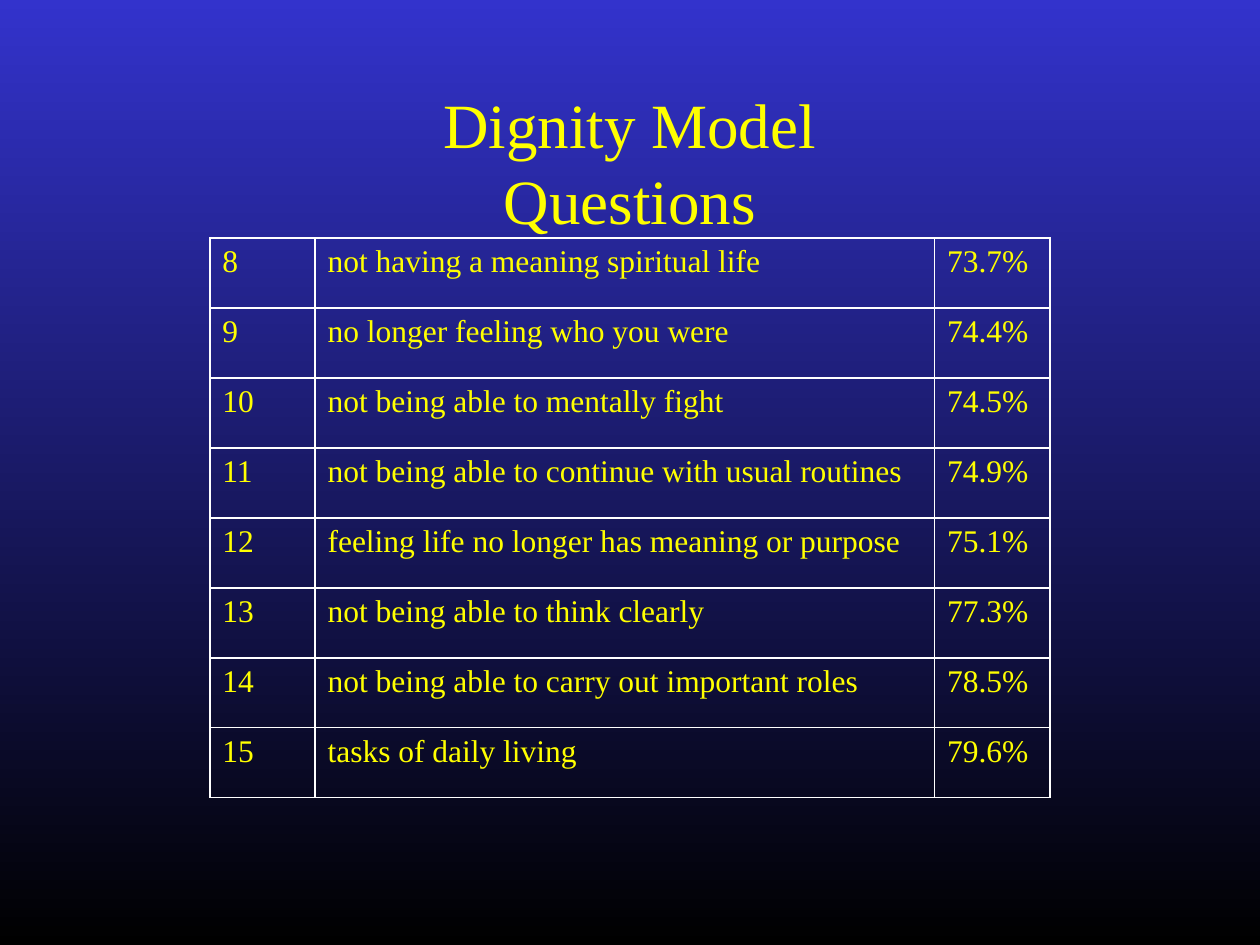
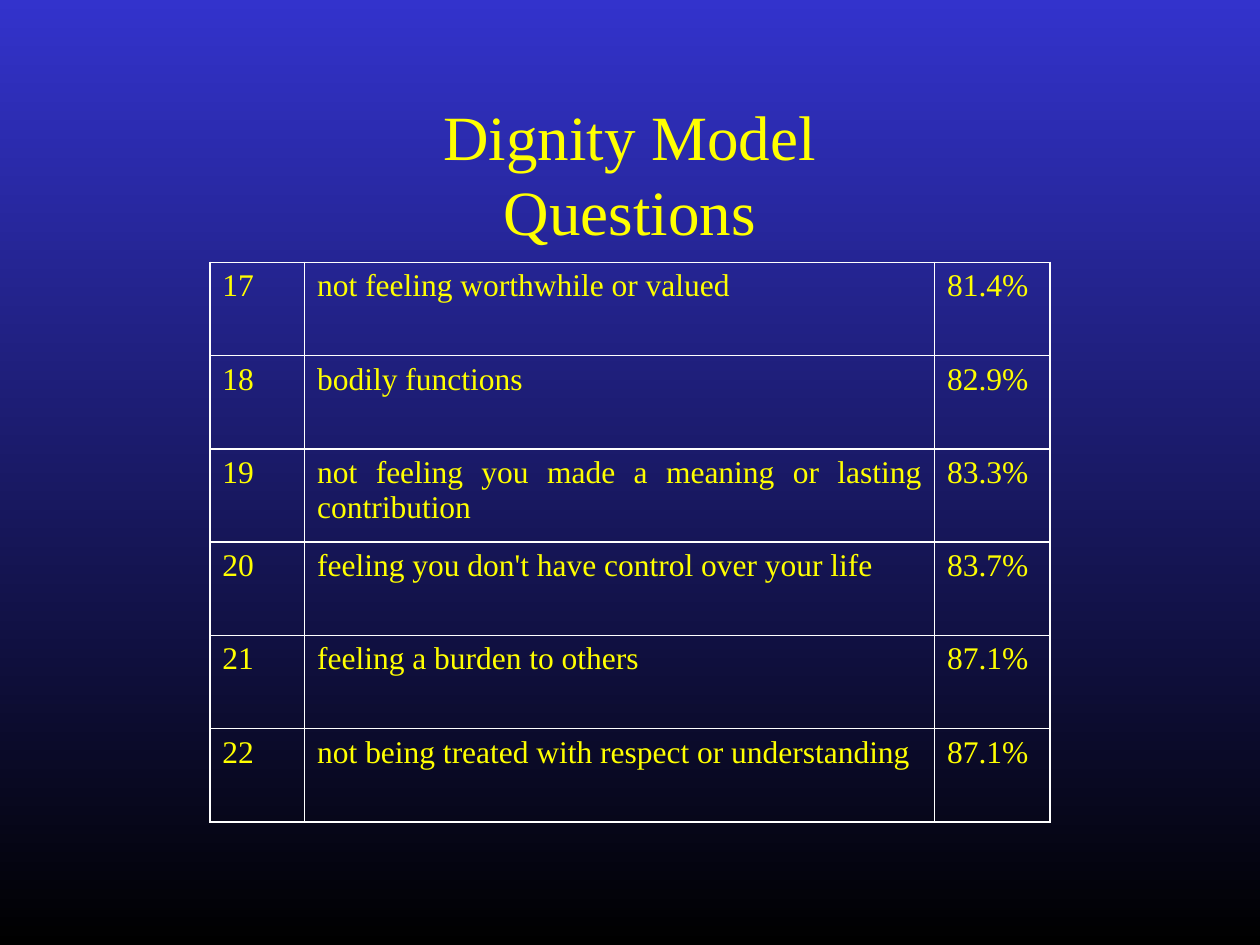
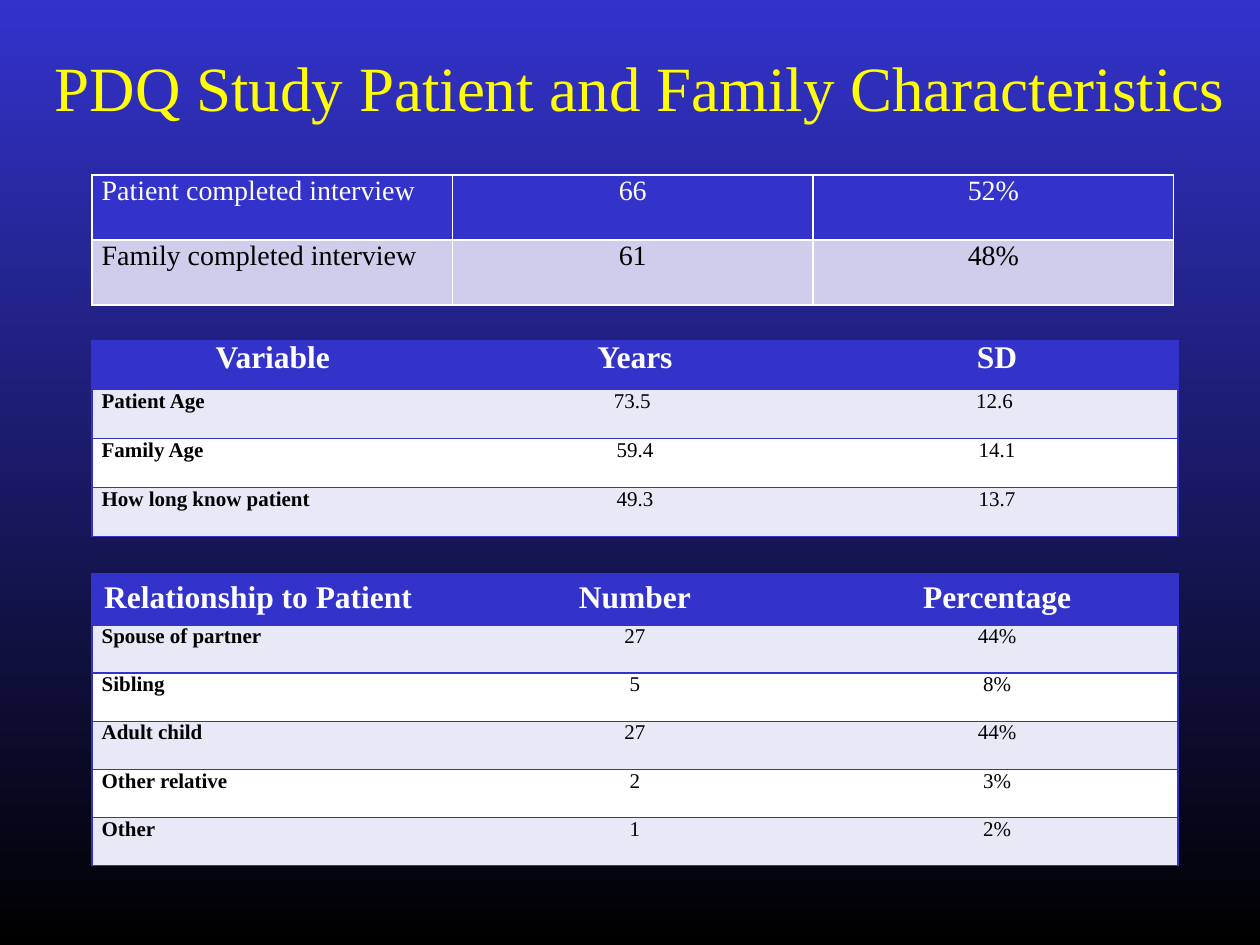
from dataclasses import dataclass

from lxml.etree import SubElement
from pptx import Presentation
from pptx.dml.color import RGBColor as RGB
from pptx.enum.text import MSO_ANCHOR as Anchor, MSO_AUTO_SIZE as AutoSize, PP_ALIGN as Align
from pptx.oxml.ns import qn
from pptx.util import Cm, Pt


# Colours and type sizes
@dataclass(frozen=True)
class Theme:
    font: str = "Times New Roman"
    blue: str = "3333CC"
    black: str = "000000"
    white: str = "FFFFFF"
    yellow: str = "FFFF00"
    lavender: str = "CECEEC"
    pale: str = "E8E8F6"
    title_size: float = 36
    table_size: float = 18
    interview_size: float = 16
    body_size: float = 12
    border: float = 1


class Deck:
    """Holds the theme and the current slide."""

    def __init__(self, theme):
        self.theme = theme
        self.prs = Presentation()
        self.prs.slide_width, self.prs.slide_height = Cm(25.4), Cm(19.05)
        backdrop = self.prs.slide_master.background.fill
        backdrop.gradient()
        backdrop.gradient_angle = 270
        for stop, colour in zip(backdrop.gradient_stops, (theme.blue, theme.black)):
            stop.color.rgb = RGB.from_string(colour)
        self.slide = None

    def style(self, paragraph, size, colour, align, bold=False, before=0):
        paragraph.alignment = align
        paragraph.space_before = Pt(before)
        font = paragraph.font
        font.name, font.size, font.bold = self.theme.font, Pt(size), bold
        font.color.rgb = RGB.from_string(colour)

    def add_slide(self, title, left, top, width, align=Align.CENTER):
        self.slide = self.prs.slides.add_slide(self.prs.slide_layouts[5])
        heading = self.slide.shapes.title
        heading.left, heading.top, heading.width, heading.height = (
            Cm(left), Cm(top), Cm(width), Cm(1.78))
        frame = heading.text_frame
        frame.text = title
        frame.auto_size = AutoSize.SHAPE_TO_FIT_TEXT
        frame.vertical_anchor = Anchor.TOP
        self.style(frame.paragraphs[0], self.theme.title_size, self.theme.yellow,
                   align, before=4.5)

    def add_table(self, left, top, widths, heights, rows):
        """Add a plain grid and return its cells by row."""
        grid = self.slide.shapes.add_table(
            len(rows), len(widths), Cm(left), Cm(top),
            Cm(sum(widths)), Cm(sum(heights))).table
        grid.first_row = grid.horz_banding = False
        for column, width in zip(grid.columns, widths):
            column.width = Cm(width)
        for line, height in zip(grid.rows, heights):
            line.height = Cm(height)
        cells = [list(line.cells) for line in grid.rows]
        for line, texts in zip(cells, rows):
            for cell, text in zip(line, texts):
                cell.text = text
        return cells

    def set_borders(self, cell, colour, sides="LRTB"):
        """Draw the named sides and clear the others."""
        properties = cell._tc.get_or_add_tcPr()
        for side in "LRTB":
            line = SubElement(properties, qn(f"a:ln{side}"), w=str(Pt(self.theme.border)))
            if side in sides:
                fill = SubElement(line, qn("a:solidFill"))
                SubElement(fill, qn("a:srgbClr"), val=colour)
            else:
                SubElement(line, qn("a:noFill"))

    def fill_cell(self, cell, colour):
        cell.fill.solid()
        cell.fill.fore_color.rgb = RGB.from_string(colour)

    def set_margins(self, cell, side=0.2, end=0):
        cell.margin_left = cell.margin_right = Cm(side)
        cell.margin_top = cell.margin_bottom = Cm(end)

    def add_questions(self, top, widths, row_height, rows):
        """Open grid of numbered questions with their percentages."""
        cells = self.add_table(4.23, top, widths, [row_height] * len(rows), rows)
        for cell in (cell for line in cells for cell in line):
            self.set_borders(cell, self.theme.white)
            cell.fill.background()
            self.style(cell.text_frame.paragraphs[0], self.theme.table_size,
                       self.theme.yellow, Align.JUSTIFY, before=1)

    def add_interviews(self, top, rows):
        """Two filled rows, white on blue and black on lavender."""
        theme = self.theme
        looks = ((theme.blue, theme.white), (theme.lavender, theme.black))
        cells = self.add_table(1.85, top, [7.27] * 3, [1.31] * 2, rows)
        for line, (fill, ink) in zip(cells, looks):
            for c, cell in enumerate(line):
                self.set_borders(cell, theme.white)
                self.fill_cell(cell, fill)
                self.set_margins(cell)
                self.style(cell.text_frame.paragraphs[0], theme.interview_size, ink,
                           Align.CENTER if c else Align.LEFT)

    def add_banded(self, top, head_height, row_height, rows,
                   head_align=Align.CENTER, head_margins=(0.2, 0)):
        """Blue heading row over alternating pale and white rows."""
        theme = self.theme
        heights = [head_height] + [row_height] * (len(rows) - 1)
        cells = self.add_table(1.85, top, [7.3] * 3, heights, rows)
        for r, line in enumerate(cells):
            for c, cell in enumerate(line):
                self.set_borders(cell, theme.blue, ("LTB", "TB", "RTB")[c])
                paragraph = cell.text_frame.paragraphs[0]
                if r == 0:
                    self.fill_cell(cell, theme.blue)
                    self.set_margins(cell, *head_margins)
                    self.style(paragraph, theme.table_size, theme.white,
                               Align.CENTER if c else head_align, bold=True)
                else:
                    self.fill_cell(cell, theme.pale if r % 2 else theme.white)
                    self.set_margins(cell)
                    self.style(paragraph, theme.body_size, theme.black,
                               Align.CENTER if c else Align.LEFT, bold=c == 0)


def main():
    deck = Deck(Theme())

    # Questions 8 to 15
    deck.add_slide("Dignity Model Questions", 5.99, 1.6, 13.41)
    deck.add_questions(4.8, [2.12, 12.49, 2.33], 1.41, [
        ("8", "not having a meaning spiritual life", "73.7%"),
        ("9", "no longer feeling who you were", "74.4%"),
        ("10", "not being able to mentally fight", "74.5%"),
        ("11", "not being able to continue with usual routines", "74.9%"),
        ("12", "feeling life no longer has meaning or purpose", "75.1%"),
        ("13", "not being able to think clearly", "77.3%"),
        ("14", "not being able to carry out important roles", "78.5%"),
        ("15", "tasks of daily living", "79.6%"),
    ])

    # Questions 17 to 22
    deck.add_slide("Dignity Model Questions", 5.99, 1.83, 13.41)
    deck.add_questions(5.29, [1.91, 12.7, 2.33], 1.88, [
        ("17", "not feeling worthwhile or valued", "81.4%"),
        ("18", "bodily functions", "82.9%"),
        ("19", "not feeling you made a meaning or lasting contribution", "83.3%"),
        ("20", "feeling you don't have control over your life", "83.7%"),
        ("21", "feeling a burden to others", "87.1%"),
        ("22", "not being treated with respect or understanding", "87.1%"),
    ])

    # Patient and family characteristics
    deck.add_slide("PDQ Study Patient and Family Characteristics",
                   0.85, 0.85, 24.55, Align.LEFT)
    deck.add_interviews(3.53, [
        ("Patient completed interview", "66", "52%"),
        ("Family completed interview", "61", "48%"),
    ])
    deck.add_banded(6.86, 0.99, 0.99, [
        ("Variable", "Years", "SD"),
        ("Patient Age", "73.5 ", "12.6 "),
        ("Family Age", "59.4", "14.1"),
        ("How long know patient", "49.3", "13.7"),
    ])
    deck.add_banded(11.57, 1.03, 0.97, [
        ("Relationship to Patient", "Number", "Percentage"),
        ("Spouse of partner", "27", "44%"),
        ("Sibling", "5", "8%"),
        ("Adult child", "27", "44%"),
        ("Other relative", "2", "3%"),
        ("Other", "1", "2%"),
    ], head_align=Align.LEFT, head_margins=(0.25, 0.13))

    deck.prs.save("out.pptx")


if __name__ == "__main__":
    main()
